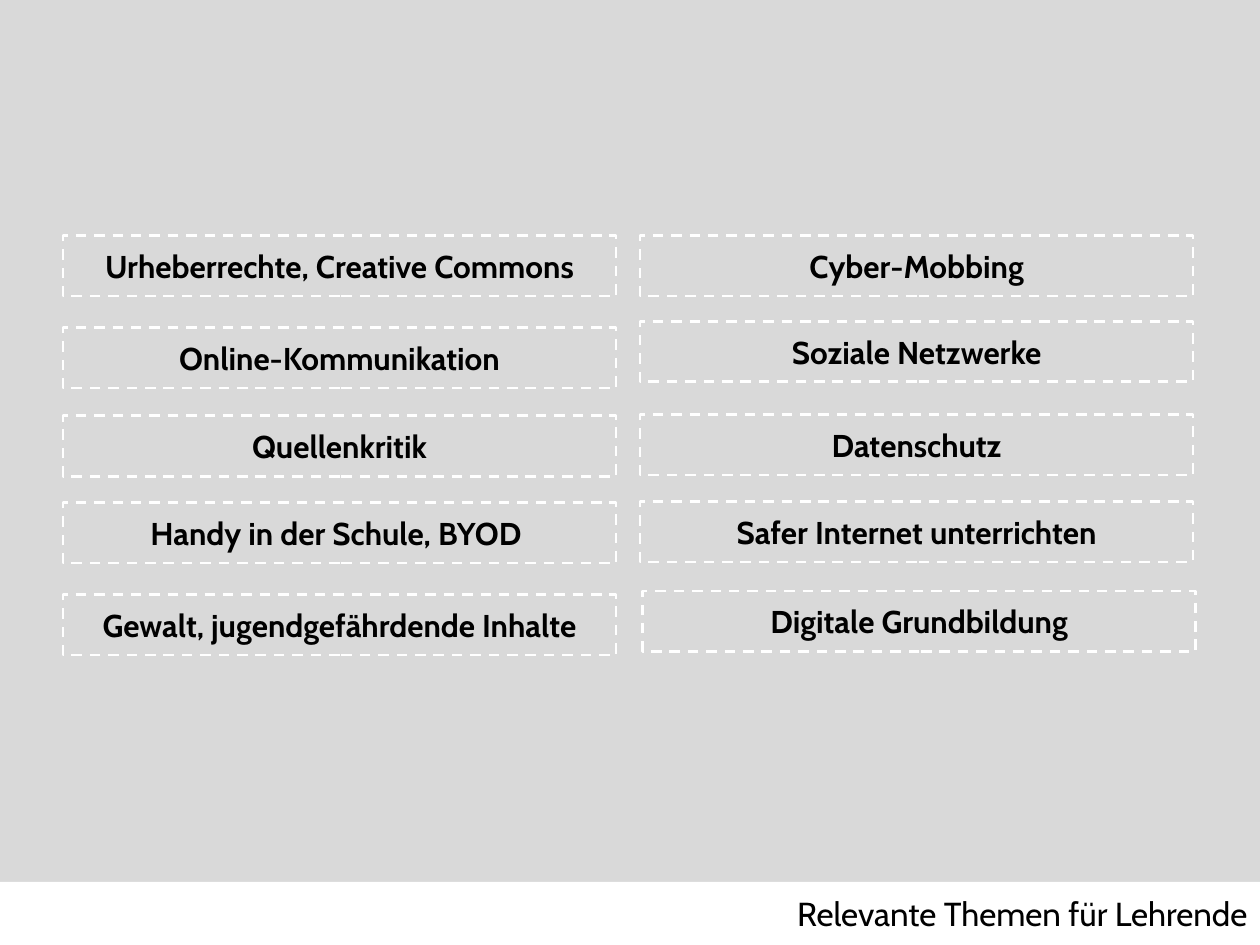
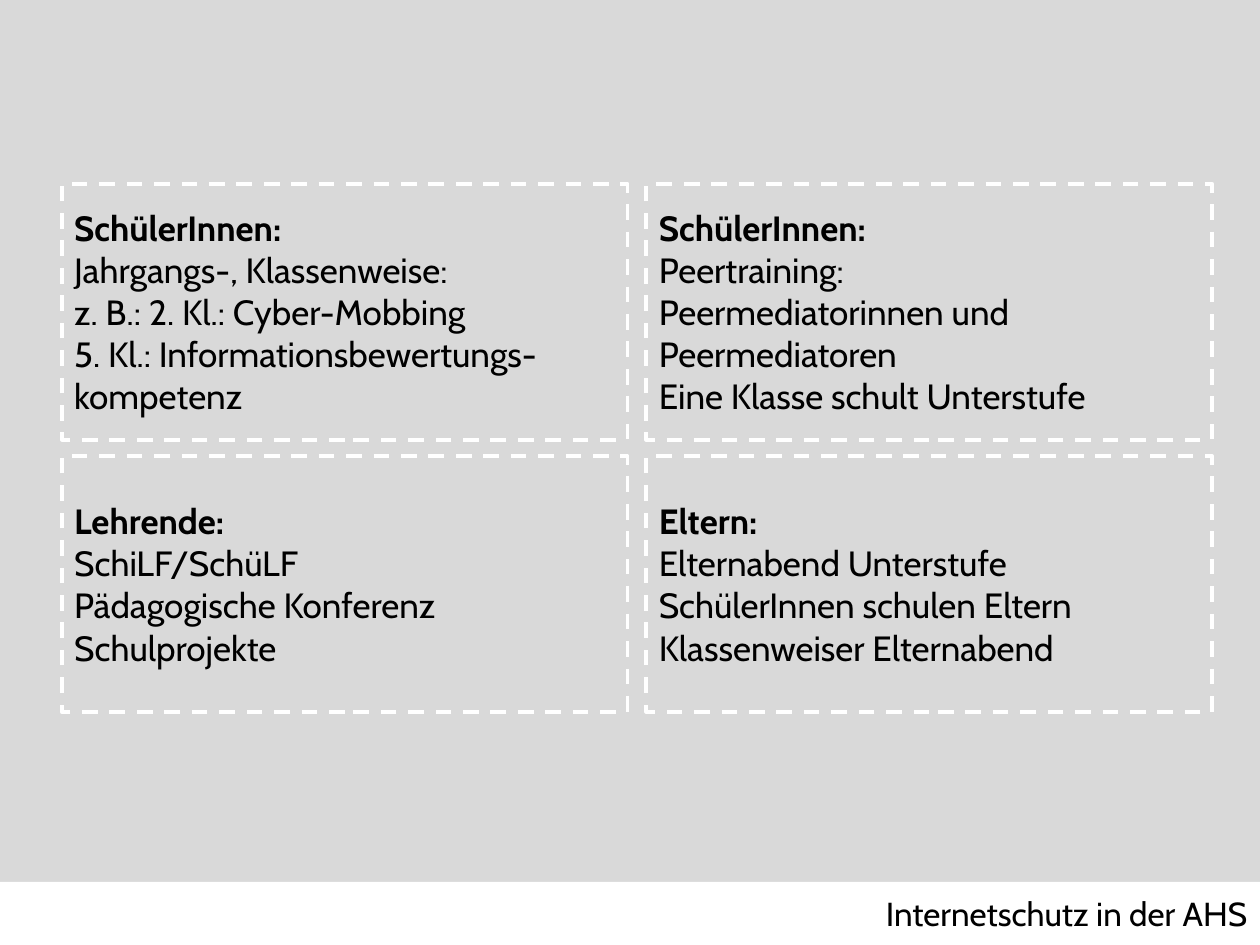
"""Builds two slides on internet safety topics and target groups at school."""
import pptx
import pptx.dml.color
import pptx.enum.dml
import pptx.enum.shapes
import pptx.enum.text
import pptx.util

Inches = pptx.util.Inches
Pt = pptx.util.Pt
RGBColor = pptx.dml.color.RGBColor
Align = pptx.enum.text.PP_ALIGN
Anchor = pptx.enum.text.MSO_ANCHOR

GREY = RGBColor(0xD9, 0xD9, 0xD9)
WHITE = RGBColor(0xFF, 0xFF, 0xFF)
BLACK = RGBColor(0, 0, 0)
FONT = "Cabin"

TOPICS = [
    (0.5, 1.87, "Urheberrechte, Creative Commons"),
    (0.5, 2.6, "Online-Kommunikation"),
    (0.5, 3.3, "Quellenkritik"),
    (0.5, 3.99, "Handy in der Schule, BYOD "),
    (0.5, 4.72, "Gewalt, jugendgefährdende Inhalte"),
    (5.08, 1.87, "Cyber-Mobbing"),
    (5.08, 2.55, "Soziale Netzwerke"),
    (5.08, 3.29, "Datenschutz"),
    (5.08, 3.98, "Safer Internet unterrichten"),
    (5.1, 4.69, "Digitale Grundbildung"),
]
TOPIC_SIZE = (4.39, 0.48)

GROUPS = [
    ["SchülerInnen:", "Jahrgangs-, Klassenweise:", "z. B.: 2. Kl.: Cyber-Mobbing",
     "5. Kl.: Informationsbewertungs-kompetenz"],
    ["SchülerInnen:", "Peertraining:", "Peermediatorinnen und Peermediatoren",
     "Eine Klasse schult Unterstufe"],
    ["Lehrende:", "SchiLF/SchüLF", "Pädagogische Konferenz", "Schulprojekte"],
    ["Eltern:", "Elternabend Unterstufe", "SchülerInnen schulen Eltern",
     "Klassenweiser Elternabend"],
]
GROUP_LEFT, GROUP_TOP = 0.49, 1.46
GROUP_SIZE = (4.49, 2.03)
GROUP_STEP = (4.64, 2.16)


def write(frame, lines, size, align, bold=False):
    """Fill a text frame with lines, the first one bold if asked."""
    frame.word_wrap = True
    frame.vertical_anchor = Anchor.MIDDLE
    for i, line in enumerate(lines):
        para = frame.paragraphs[0] if i == 0 else frame.add_paragraph()
        para.alignment = align
        run = para.add_run()
        run.text = line
        font = run.font
        font.name, font.size = FONT, Pt(size)
        font.bold = bold and i == 0
        font.color.rgb = BLACK


def add_rect(slide, left, top, width, height):
    """Add a plain rectangle without shadow."""
    rect = slide.shapes.add_shape(
        pptx.enum.shapes.MSO_SHAPE.RECTANGLE,
        Inches(left), Inches(top), Inches(width), Inches(height))
    rect.shadow.inherit = False
    return rect


def add_box(slide, place, lines, size, align, weight):
    """Add a dashed box with text."""
    box = add_rect(slide, *place)
    box.fill.background()
    box.line.color.rgb = WHITE
    box.line.width = Pt(weight)
    box.line.dash_style = pptx.enum.dml.MSO_LINE.DASH
    write(box.text_frame, lines, size, align, True)


def add_slide(deck, text):
    """Add a slide with the white band and its title at the foot."""
    slide = deck.slides.add_slide(deck.slide_layouts[5])
    band = add_rect(slide, 0, 7, 10, 0.5)
    band.fill.solid()
    band.fill.fore_color.rgb = WHITE
    band.line.fill.background()
    title = slide.shapes.title
    title.left, title.top = Inches(4.53), Inches(7.04)
    title.width, title.height = Inches(5.47), Inches(0.42)
    write(title.text_frame, [text], 19, Align.RIGHT)
    title.text_frame.auto_size = pptx.enum.text.MSO_AUTO_SIZE.NONE
    slide.shapes.element.append(title.element)
    return slide


def main():
    """Build and save the deck."""
    deck = pptx.Presentation()
    deck.slide_width, deck.slide_height = Inches(10), Inches(7.5)
    back = deck.slide_master.background.fill
    back.solid()
    back.fore_color.rgb = GREY

    slide = add_slide(deck, "Relevante Themen für Lehrende")
    for left, top, topic in TOPICS:
        add_box(slide, (left, top, *TOPIC_SIZE), [topic], 18, Align.CENTER, 1.5)

    slide = add_slide(deck, "Internetschutz in der AHS")
    for i, lines in enumerate(GROUPS):
        row, col = divmod(i, 2)
        left = GROUP_LEFT + col * GROUP_STEP[0]
        top = GROUP_TOP + row * GROUP_STEP[1]
        add_box(slide, (left, top, *GROUP_SIZE), lines, 20, Align.LEFT, 2.25)

    deck.save("out.pptx")


if __name__ == "__main__":
    main()
